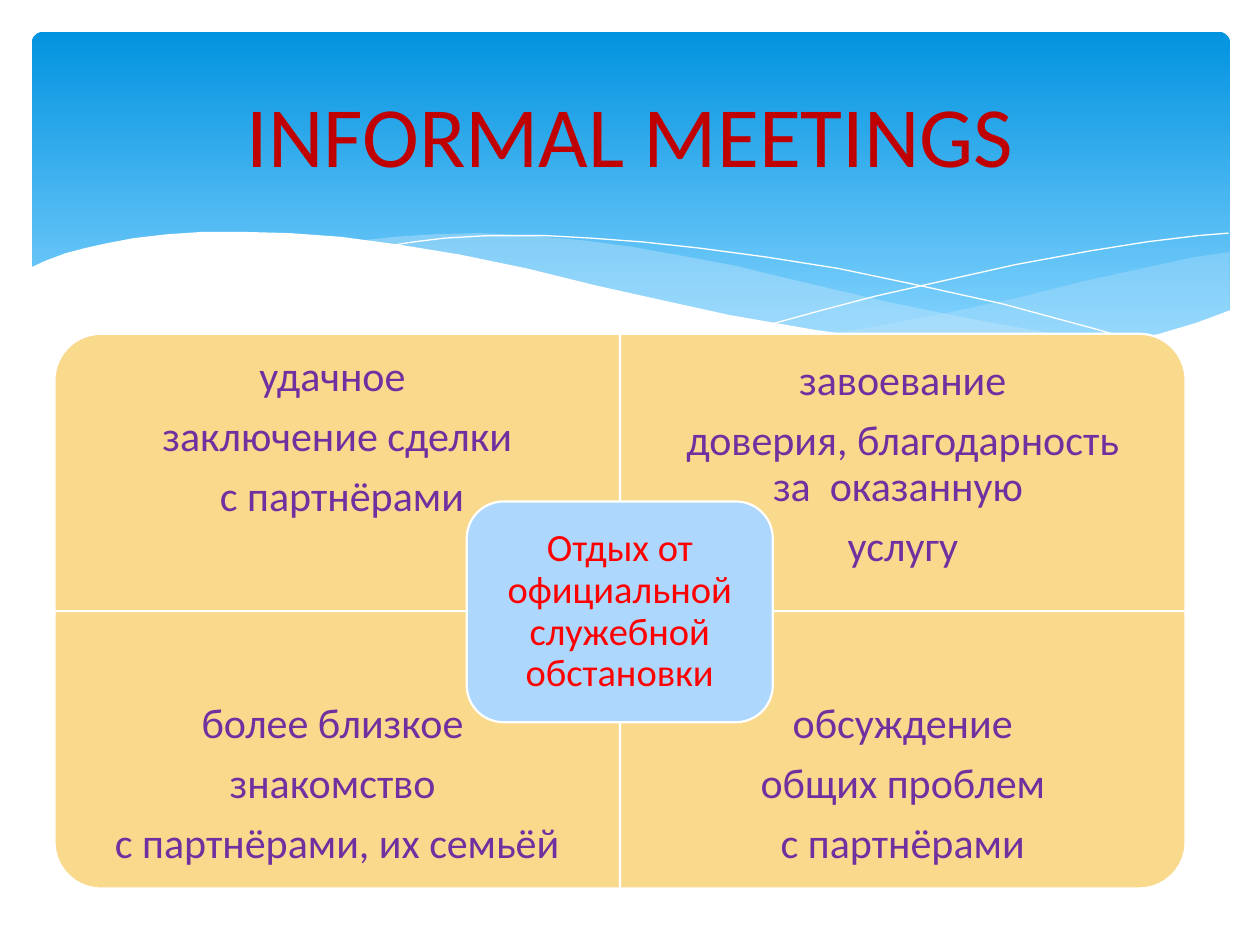
from lxml import etree
from pptx import Presentation
from pptx import util as u
from pptx.dml.color import RGBColor
from pptx.enum import shapes, text
from pptx.oxml.ns import qn

COLORS = {
    "sky_top": "0293E0", "sky_bottom": "83D3FE", "haze": "C6E7FC", "white": "FFFFFF",
    "quadrant": "F9D98C", "center": "AED7FE",
    "title": "C00000", "reason": "7030A0", "rest": "FF0000",
}
rgb = {name: RGBColor.from_string(value) for name, value in COLORS.items()}
FONT = "Calibri"

prs = Presentation()
prs.slide_width, prs.slide_height = u.Cm(25.4), u.Cm(19.05)
slide = prs.slides.add_slide(prs.slide_layouts[5])


def add_wave(points, color=None, alpha=None):
    """Filled wave when a colour is given, otherwise a thin white curve."""
    # The builder keeps whole units only, so each point is given in hundredths
    units = [(round(x * 100), round(y * 100)) for x, y in points]
    builder = slide.shapes.build_freeform(*units[0], scale=u.Cm(0.0254))
    builder.add_line_segments(units[1:], close=color is not None)
    wave = builder.convert_to_shape()
    wave.shadow.inherit = False
    if color is None:
        wave.fill.background()
        wave.line.color.rgb = rgb["white"]
        wave.line.width = u.Pt(0)
        return
    wave.fill.solid()
    wave.fill.fore_color.rgb = rgb[color]
    wave.line.fill.background()
    if alpha:
        tint = wave.fill._xPr.find(qn("a:solidFill"))[0]
        etree.SubElement(tint, qn("a:alpha"), val=str(alpha * 1000))


def write(frame, paragraphs, size, color, inset):
    """Centred paragraphs; a line feed inside one becomes a line break."""
    frame.word_wrap = True
    frame.vertical_anchor = text.MSO_ANCHOR.MIDDLE
    frame.margin_left = frame.margin_right = u.Cm(inset)
    frame.margin_top = frame.margin_bottom = u.Cm(inset)
    for i, words in enumerate(paragraphs):
        paragraph = frame.paragraphs[0] if i == 0 else frame.add_paragraph()
        paragraph.alignment = text.PP_ALIGN.CENTER
        paragraph.line_spacing = 0.9
        if i < len(paragraphs) - 1:
            paragraph.space_after = u.Pt(size * 0.35)
        for j, line in enumerate(words.split("\n")):
            if j:
                paragraph.add_line_break()
            run = paragraph.add_run()
            run.text = line
            run.font.name, run.font.size = FONT, u.Pt(size)
            run.font.color.rgb = rgb[color]


# Sky banner
sky = slide.shapes.add_shape(shapes.MSO_SHAPE.ROUNDED_RECTANGLE,
                             u.Cm(0.64), u.Cm(0.64), u.Cm(24.16), u.Cm(6.86))
sky.adjustments[0] = 0.034
sky.shadow.inherit = False
sky.line.fill.background()
sky.fill.gradient()
sky.fill.gradient_angle = 270
for stop, color, position in zip(sky.fill.gradient_stops, ("sky_top", "sky_bottom"), (0, 0.9)):
    stop.color.rgb = rgb[color]
    stop.position = position

# Waves along the lower edge of the sky, in inches
add_wave([(9.76, 2), (9.48, 2.04), (9.06, 2.13), (8.61, 2.23), (8.05, 2.37), (7.53, 2.48),
          (7.06, 2.57), (6.61, 2.65), (6.91, 2.69), (7.32, 2.74), (7.69, 2.77), (8.14, 2.78),
          (8.54, 2.76), (8.89, 2.72), (9.21, 2.65), (9.49, 2.57), (9.76, 2.47)], "haze", 29)
add_wave([(8.93, 2.73), (8.37, 2.65), (7.75, 2.54), (7.06, 2.4), (6.29, 2.22), (5.84, 2.11),
          (5.41, 2.03), (5.02, 1.96), (4.65, 1.91), (4.2, 1.87), (3.8, 1.85), (3.44, 1.86),
          (3.13, 1.88), (2.86, 1.91), (3.23, 1.96), (3.62, 2.03), (4.04, 2.11), (4.49, 2.22),
          (5.3, 2.4), (6.01, 2.55), (6.5, 2.64), (6.95, 2.7), (7.36, 2.75), (7.73, 2.77),
          (8.18, 2.78), (8.57, 2.77)], "haze", 40)
add_wave([(3.09, 1.95), (3.28, 1.92), (3.53, 1.89), (3.87, 1.87), (4.33, 1.87), (4.69, 1.89),
          (5.1, 1.92), (5.56, 1.97), (6.08, 2.04), (6.65, 2.13), (7.27, 2.26), (7.95, 2.41),
          (8.69, 2.61), (9.07, 2.72)])
add_wave([(6.13, 2.57), (6.53, 2.46), (6.95, 2.35), (7.48, 2.23), (8.06, 2.1), (8.66, 1.99),
          (9.1, 1.92), (9.51, 1.87), (9.75, 1.85)])
add_wave([(9.77, 2.46), (9.5, 2.56), (9.2, 2.65), (8.87, 2.71), (8.5, 2.75), (8.09, 2.77),
          (7.61, 2.75), (7.08, 2.7), (6.48, 2.62), (5.79, 2.5), (5.29, 2.39), (4.75, 2.27),
          (4.18, 2.13), (3.65, 2.02), (3.16, 1.94), (2.71, 1.88), (2.3, 1.85), (1.93, 1.84),
          (1.61, 1.84), (1.32, 1.86), (1.06, 1.89), (0.85, 1.93), (0.67, 1.97), (0.52, 2.01),
          (0.36, 2.07), (0.23, 2.13), (0.23, 3.29), (9.77, 3.29)], "white")

# Four quadrants: column, row, rotation, text top, text height, inset, reason
LEFT, TOP, WIDTH, HEIGHT = 1.1, 6.73, 11.4, 5.59
quadrants = [
    (0, 0, 270, 6.73, 4.19, 0.48, ["удачное ", "заключение сделки", " с партнёрами"]),
    (1, 0, 0, 6.73, 5.28, 0.4,
     ["завоевание", " доверия, благодарность \nза  оказанную ", "услугу"]),
    (0, 1, 180, 13.72, 4.19, 0.48, ["более близкое ", "знакомство ", "с партнёрами, их семьёй"]),
    (1, 1, 90, 13.72, 4.19, 0.48, ["обсуждение", " общих проблем ", "с партнёрами"]),
]
for column, row, rotation, text_top, text_height, inset, reason in quadrants:
    left, top = LEFT + column * WIDTH, TOP + row * HEIGHT
    # A quarter turn swaps the sides around the same middle
    width, height = (HEIGHT, WIDTH) if rotation % 180 else (WIDTH, HEIGHT)
    quadrant = slide.shapes.add_shape(
        shapes.MSO_SHAPE.ROUND_1_RECTANGLE,
        u.Cm(left + (WIDTH - width) / 2), u.Cm(top + (HEIGHT - height) / 2),
        u.Cm(width), u.Cm(height))
    quadrant.rotation = rotation
    quadrant.shadow.inherit = False
    quadrant.fill.solid()
    quadrant.fill.fore_color.rgb = rgb["quadrant"]
    quadrant.line.color.rgb = rgb["white"]
    quadrant.line.width = u.Pt(1.25)
    label = slide.shapes.add_textbox(u.Cm(left), u.Cm(text_top), u.Cm(WIDTH), u.Cm(text_height))
    write(label.text_frame, reason, 24, "reason", inset)

# Central reason
center = slide.shapes.add_shape(shapes.MSO_SHAPE.ROUNDED_RECTANGLE,
                                u.Cm(9.41), u.Cm(10.11), u.Cm(6.17), u.Cm(4.45))
center.shadow.inherit = False
center.fill.solid()
center.fill.fore_color.rgb = rgb["center"]
center.line.color.rgb = rgb["white"]
center.line.width = u.Pt(1.25)
write(center.text_frame, ["Отдых от официальной служебной обстановки"], 22, "rest", 0.23)

# Title, brought in front of the sky
title = slide.shapes.title
title.left, title.top, title.width, title.height = u.Cm(1.27), u.Cm(0.94), u.Cm(22.86), u.Cm(3.48)
write(title.text_frame, ["INFORMAL MEETINGS"], 49, "title", 0.2)
title.text_frame.paragraphs[0].line_spacing = 1.0
slide.shapes._spTree.append(title._element)

prs.save("out.pptx")
